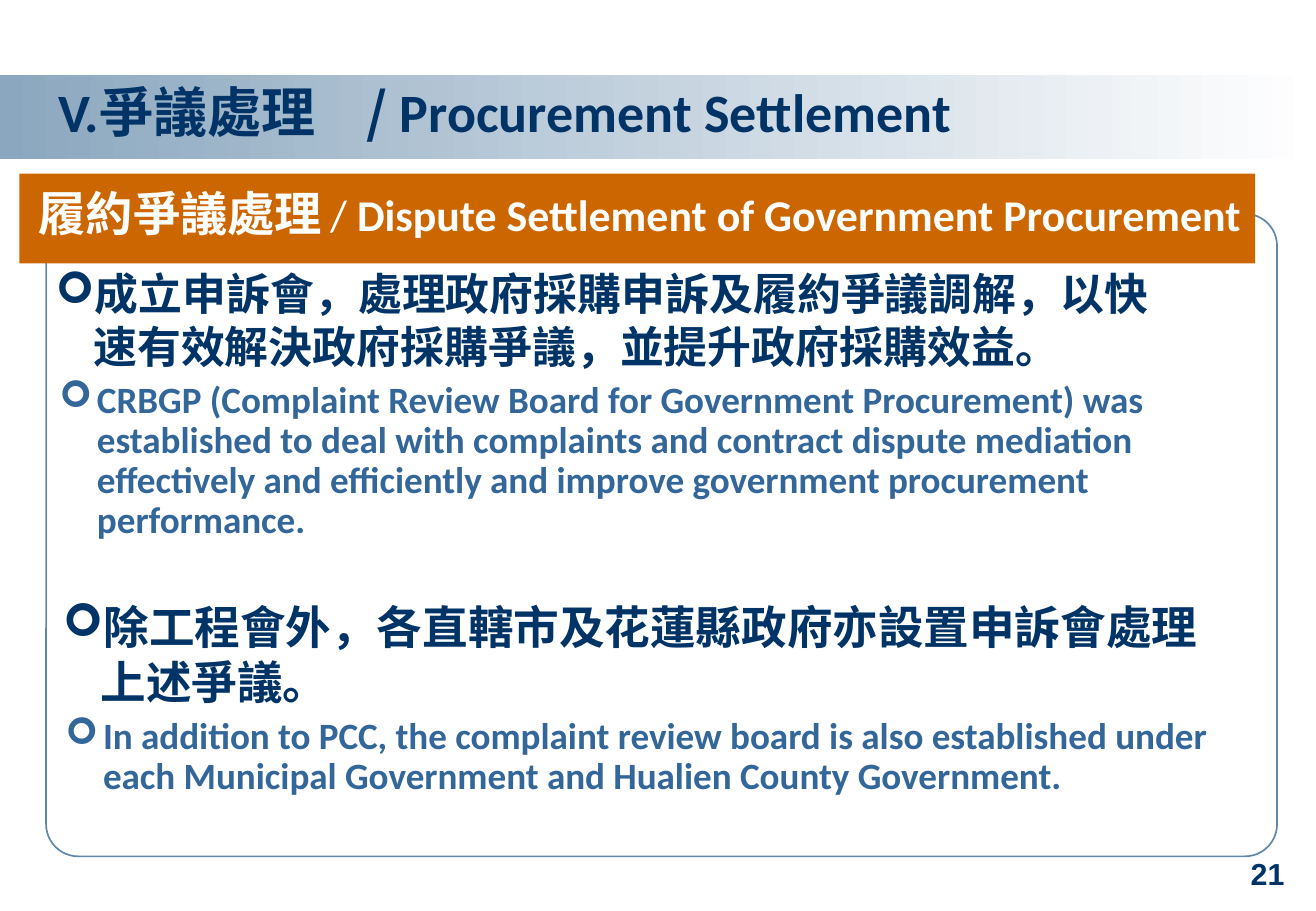
import pptx
import pptx.util
import pptx.dml.color
import pptx.enum.shapes
import pptx.enum.text
import pptx.oxml
import pptx.oxml.ns

Inches = pptx.util.Inches
Pt = pptx.util.Pt
NAVY, BLUE, WHITE, ORANGE = "003366", "336699", "FFFFFF", "CC6600"
CJK = "Noto Sans CJK SC"


def color(value):
    return pptx.dml.color.RGBColor.from_string(value)


def add_element(parent, tag, **attributes):
    element = pptx.oxml.ns.qn(tag)
    child = parent.makeelement(element, attributes)
    parent.append(child)
    return child


def add_panel(page, kind, box, fill=None):
    panel = page.shapes.add_shape(kind, *map(Inches, box))
    panel.shadow.inherit = False
    panel.line.fill.background()
    if fill:
        panel.fill.solid()
        panel.fill.fore_color.rgb = color(fill)
    return panel


def add_text(page, box, wrap=True):
    frame = page.shapes.add_textbox(*map(Inches, box)).text_frame
    frame.word_wrap = wrap
    return frame, frame.paragraphs[0]


def add_span(para, text, size, fill, font="Calibri", bold=True):
    span = para.add_run()
    span.text = text
    span.font.size = Pt(size)
    span.font.name = font
    span.font.bold = bold
    span.font.color.rgb = color(fill)
    add_element(span.font._element, "a:ea", typeface=CJK)


def add_title(page, left, top, width, height):
    band = add_panel(page, pptx.enum.shapes.MSO_SHAPE.RECTANGLE, (left, top, width, height))
    band.fill.gradient()
    band.fill.gradient_angle = 0
    for stop, value, position in zip(band.fill.gradient_stops, ("8BA7BF", WHITE), (0, 1)):
        stop.color.rgb = color(value)
        stop.position = position
    frame, para = add_text(page, (left + 0.38, top - 0.02, width - 0.56, 0.64))
    tabs = add_element(para._p.get_or_add_pPr(), "a:tabLst")
    add_element(tabs, "a:tab", pos=str(Inches(2.54)), algn="l")
    add_span(para, "V.爭議處理\t", 32, NAVY)
    add_span(para, "/ ", 32, NAVY, CJK)
    add_span(para, "Procurement Settlement", 32, NAVY)


def add_frame(page, left, top, width, height):
    outline = add_panel(page, pptx.enum.shapes.MSO_SHAPE.ROUNDED_RECTANGLE, (left, top, width, height))
    outline.adjustments[0] = 0.05
    outline.fill.background()
    outline.line.color.rgb = color("6087A8")
    outline.line.width = Pt(1)


def add_banner(page, left, top, width, height):
    add_panel(page, pptx.enum.shapes.MSO_SHAPE.RECTANGLE, (left, top, width, height), ORANGE)
    frame, para = add_text(page, (left + 0.06, top + 0.04, width + 0.05, 0.57))
    add_span(para, "履約爭議處理", 28, WHITE)
    add_span(para, " ", 22, WHITE, "Times New Roman", False)
    add_span(para, "/ ", 26, WHITE, bold=False)
    add_span(para, "Dispute Settlement of Government Procurement", 26, WHITE)


def add_point(page, box, text, size, fill, spacing=1):
    frame, para = add_text(page, box)
    para.line_spacing = spacing
    properties = para._p.get_or_add_pPr()
    properties.set("marL", str(Inches(0.31)))
    properties.set("indent", str(Inches(-0.31)))
    add_element(properties, "a:buFont", typeface="Wingdings")
    add_element(properties, "a:buChar", char="➢")
    add_span(para, text, size, fill)


def add_page_number(page, box):
    frame, para = add_text(page, box, wrap=False)
    frame.vertical_anchor = pptx.enum.text.MSO_ANCHOR.MIDDLE
    para.alignment = pptx.enum.text.PP_ALIGN.RIGHT
    add_span(para, "21", 18, NAVY, "Arial")


def main():
    deck = pptx.Presentation()
    deck.slide_width, deck.slide_height = Inches(10.83), Inches(7.5)
    page = deck.slides.add_slide(deck.slide_layouts[6])
    add_page_number(page, (8.41, 6.94, 2.26, 0.5))
    add_title(page, 0, 0.62, 10.83, 0.69)
    add_frame(page, 0.38, 1.76, 10.13, 5.29)
    add_banner(page, 0.16, 1.43, 10.17, 0.74)
    add_point(page, (0.36, 2.15, 9.33, 0.97),
              "成立申訴會，處理政府採購申訴及履約爭議調解，以快速有效解決政府採購爭議，並提升政府採購效益。",
              26, NAVY)
    add_point(page, (0.39, 3.09, 9.64, 1.43),
              "CRBGP (Complaint Review Board for Government Procurement) was established to deal "
              "with complaints and contract dispute mediation effectively and efficiently and "
              "improve government procurement performance.", 22, BLUE, 0.9)
    add_point(page, (0.42, 4.88, 9.74, 1.01),
              "除工程會外，各直轄市及花蓮縣政府亦設置申訴會處理上述爭議。", 27, NAVY)
    add_point(page, (0.44, 5.86, 9.87, 0.78),
              "In addition to PCC, the complaint review board is also established under each "
              "Municipal Government and Hualien County Government.", 22, BLUE, 0.9)
    deck.save("out.pptx")


if __name__ == "__main__":
    main()
